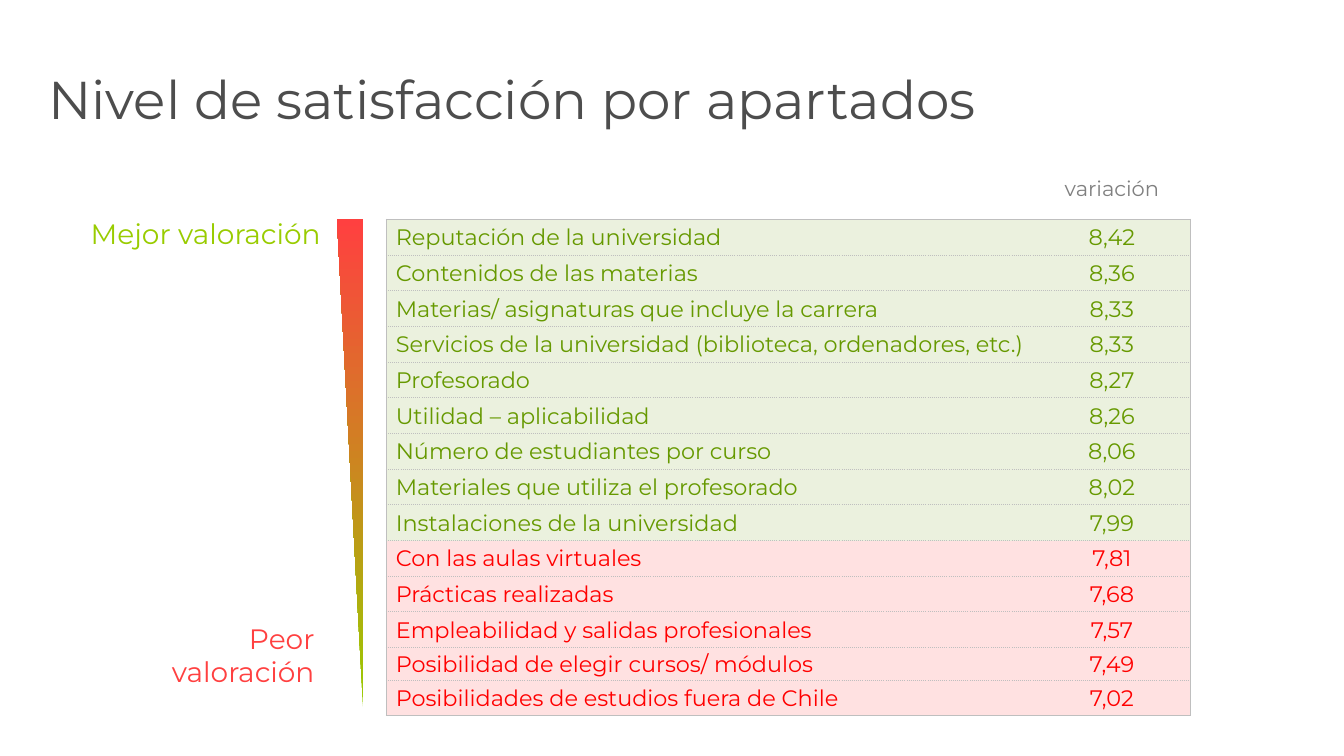
from dataclasses import dataclass

from lxml.etree import SubElement
from pptx import Presentation
from pptx.dml.color import RGBColor
from pptx.enum.shapes import MSO_SHAPE as Preset
from pptx.enum.text import MSO_ANCHOR as Anchor, PP_ALIGN as Align
from pptx.oxml.ns import qn
from pptx.slide import Slide
from pptx.table import Table, _Cell as Cell
from pptx.text.text import TextFrame
from pptx.util import Pt

PX = 9525  # 96 px to the inch
NO_TABLE_STYLE = "{2D5ABB26-0587-4C30-8999-92F81FD0307C}"


@dataclass(frozen=True)
class Theme:
    font: str = "Montserrat"
    title: str = "4D4D4D"
    header: str = "808080"
    best: str = "99CC00"
    worst: str = "FF4040"
    high_text: str = "669900"
    high_fill: str = "EBF1DE"
    low_text: str = "FF0000"
    low_fill: str = "FFE1E1"
    border: str = "BFBFBF"
    title_size: int = 38
    label_size: int = 20
    row_size: int = 16
    header_size: int = 15


@dataclass(frozen=True)
class Label:
    text: str
    left: int
    top: int
    width: int
    height: int
    size: int
    color: str
    align: Align
    inset: int
    space_after: int = 0


@dataclass(frozen=True)
class Rating:
    topic: str
    score: str
    height: int = 34


@dataclass(frozen=True)
class Edge:
    points: float
    dash: str


THEME = Theme()
SOLID = Edge(1, "solid")
DOTTED = Edge(0.75, "sysDot")

LABELS = [
    Label("Nivel de satisfacción por apartados", 36, 58, 914, 105,
          THEME.title_size, THEME.title, Align.LEFT, 10),
    Label("Mejor valoración", 44, 201, 271, 42,
          THEME.label_size, THEME.best, Align.RIGHT, 19, 12),
    Label("Peor valoración", 83, 587, 226, 42,
          THEME.label_size, THEME.worst, Align.RIGHT, 19, 12),
]

HIGH_RATINGS = [
    Rating("Reputación de la universidad", "8,42"),
    Rating("Contenidos de las materias", "8,36"),
    Rating("Materias/ asignaturas que incluye la carrera", "8,33"),
    Rating("Servicios de la universidad (biblioteca, ordenadores, etc.)", "8,33"),
    Rating("Profesorado", "8,27"),
    Rating("Utilidad – aplicabilidad", "8,26"),
    Rating("Número de estudiantes por curso", "8,06"),
    Rating("Materiales que utiliza el profesorado", "8,02"),
    Rating("Instalaciones de la universidad", "7,99"),
]
LOW_RATINGS = [
    Rating("Con las aulas virtuales", "7,81"),
    Rating("Prácticas realizadas", "7,68"),
    Rating("Empleabilidad y salidas profesionales", "7,57"),
    Rating("Posibilidad de elegir cursos/ módulos", "7,49", 31),
    Rating("Posibilidades de estudios fuera de Chile", "7,02"),
]
RATINGS = HIGH_RATINGS + LOW_RATINGS

TABLE_LEFT, TABLE_TOP, HEADER_HEIGHT = 368, 163, 46
COLUMN_WIDTHS = (616, 150)


def write(frame: TextFrame, text: str, size: int, color: str, align: Align) -> None:
    para = frame.paragraphs[0]
    para.alignment = align
    span = para.add_run()
    span.text = text
    span.font.name = THEME.font
    span.font.size = Pt(size)
    span.font.color.rgb = RGBColor.from_string(color)


def add_label(page: Slide, label: Label) -> None:
    box = page.shapes.add_textbox(label.left * PX, label.top * PX,
                                  label.width * PX, label.height * PX)
    frame = box.text_frame
    frame.word_wrap = True
    frame.margin_left = label.inset * PX
    write(frame, label.text, label.size, label.color, label.align)
    frame.paragraphs[0].space_after = Pt(label.space_after)


def set_margins(cell: Cell, left: int, top: int, right: int, bottom: int) -> None:
    cell.margin_left, cell.margin_top = left * PX, top * PX
    cell.margin_right, cell.margin_bottom = right * PX, bottom * PX


def draw_edges(cell: Cell, edges: dict[str, Edge]) -> None:
    """Add cell borders, keyed by side in the order L, R, T, B."""
    properties = cell._tc.get_or_add_tcPr()
    for side, edge in edges.items():
        line = SubElement(properties, qn(f"a:ln{side}"), w=str(int(Pt(edge.points))))
        fill = SubElement(line, qn("a:solidFill"))
        SubElement(fill, qn("a:srgbClr"), val=THEME.border)
        SubElement(line, qn("a:prstDash"), val=edge.dash)


def fill_rating_row(table: Table, index: int, rating: Rating) -> None:
    is_high = index < len(HIGH_RATINGS)
    text_color = THEME.high_text if is_high else THEME.low_text
    fill_color = THEME.high_fill if is_high else THEME.low_fill
    top = SOLID if index == 0 else DOTTED
    bottom = SOLID if index == len(RATINGS) - 1 else DOTTED
    row = index + 1
    table.rows[row].height = rating.height * PX
    columns = [(rating.topic, Align.LEFT, 9, "L"), (rating.score, Align.CENTER, 1, "R")]
    for column, (text, align, inset, outer_side) in enumerate(columns):
        cell = table.cell(row, column)
        cell.vertical_anchor = Anchor.MIDDLE
        set_margins(cell, inset, 1, 1, 0)
        draw_edges(cell, {outer_side: SOLID, "T": top, "B": bottom})
        cell.fill.solid()
        cell.fill.fore_color.rgb = RGBColor.from_string(fill_color)
        write(cell.text_frame, text, THEME.row_size, text_color, align)


def add_ratings_table(page: Slide) -> None:
    height = HEADER_HEIGHT + sum(rating.height for rating in RATINGS)
    frame = page.shapes.add_table(len(RATINGS) + 1, len(COLUMN_WIDTHS),
                                  TABLE_LEFT * PX, TABLE_TOP * PX,
                                  sum(COLUMN_WIDTHS) * PX, height * PX)
    table = frame.table
    table.first_row = table.horz_banding = False
    table._tbl.tblPr.find(qn("a:tableStyleId")).text = NO_TABLE_STYLE
    for column, width in zip(table.columns, COLUMN_WIDTHS):
        column.width = width * PX

    table.rows[0].height = HEADER_HEIGHT * PX
    for cell in table.rows[0].cells:
        set_margins(cell, 10, 5, 10, 5)
        draw_edges(cell, {"B": SOLID})
        cell.fill.background()
    write(table.cell(0, 1).text_frame, "variación",
          THEME.header_size, THEME.header, Align.CENTER)
    for index, rating in enumerate(RATINGS):
        fill_rating_row(table, index, rating)


def add_scale_wedge(page: Slide) -> None:
    wedge = page.shapes.add_shape(Preset.RIGHT_TRIANGLE, 321 * PX, 209 * PX,
                                  25 * PX, 468 * PX)
    wedge.shadow.inherit = False
    wedge.line.fill.background()
    for flip in ("flipH", "flipV"):
        wedge._element.spPr.xfrm.set(flip, "1")
    wedge.fill.gradient()
    wedge.fill.gradient_angle = 270
    for stop, color in zip(wedge.fill.gradient_stops, (THEME.best, THEME.worst)):
        stop.color.rgb = RGBColor.from_string(color)


def main() -> None:
    deck = Presentation()
    deck.slide_width, deck.slide_height = 1280 * PX, 720 * PX
    page = deck.slides.add_slide(deck.slide_layouts[6])
    for label in LABELS:
        add_label(page, label)
    add_ratings_table(page)
    add_scale_wedge(page)
    deck.save("out.pptx")


if __name__ == "__main__":
    main()
